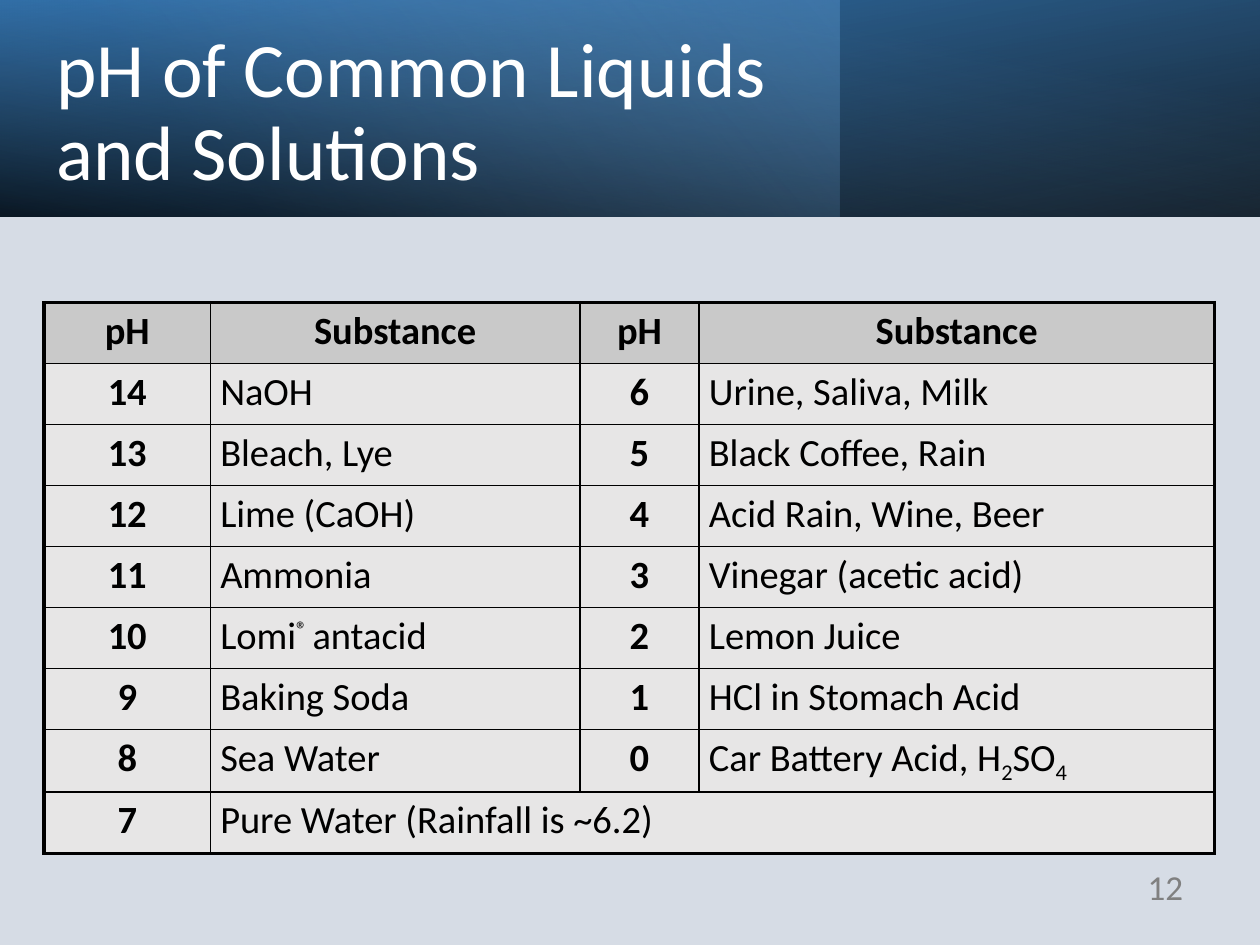
from lxml import etree
from pptx import Presentation
from pptx import util as u
from pptx.dml.color import RGBColor
from pptx.enum import shapes, text
from pptx.oxml import parse_xml
from pptx.oxml.ns import nsdecls, qn


def color(value):
    return RGBColor.from_string(value)


def write(paragraph, runs, size, ink, bold=False):
    for words, baseline in runs:
        run = paragraph.add_run()
        run.text = words
        font_format = {"name": "Calibri", "size": u.Pt(size), "bold": bold}
        for name, value in font_format.items():
            setattr(run.font, name, value)
        run.font.color.rgb = color(ink)
        if baseline:
            run.font._element.set("baseline", str(baseline * 1000))


presentation = Presentation()
presentation.slide_width = u.Cm(25.4)
presentation.slide_height = u.Cm(19.05)
slide = presentation.slides.add_slide(presentation.slide_layouts[6])
slide.background.fill.solid()
slide.background.fill.fore_color.rgb = color("D6DCE5")

bands = [
    (25.4, 180, True, 100, [(0, "000000", 96), (100, "2E75B6", 100)]),
    (16.93, 0, False, 140, [(0, "5B9BD5", 41), (74, "9DC3E6", 0)]),
    (25.4, 0, True, 260, [(0, "000000", 63), (78, "5B9BD5", 15)]),
]
for width, rotation, flipped, angle, stops in bands:
    shape = slide.shapes.add_shape(
        shapes.MSO_SHAPE.RECTANGLE, u.Cm(0), u.Cm(0), u.Cm(width), u.Cm(4.37)
    )
    shape.shadow.inherit = False
    shape.line.fill.background()
    shape.fill.background()
    shape.rotation = rotation
    properties = shape._element.spPr
    if flipped:
        properties.find(qn("a:xfrm")).set("flipH", "1")
    stop_xml = "".join(
        f'<a:gs pos="{position * 1000}"><a:srgbClr val="{shade}">'
        f'<a:alpha val="{alpha * 1000}"/></a:srgbClr></a:gs>'
        for position, shade, alpha in stops
    )
    gradient = parse_xml(
        f'<a:gradFill {nsdecls("a")} rotWithShape="1"><a:gsLst>{stop_xml}</a:gsLst>'
        f'<a:lin ang="{angle * 60000}" scaled="0"/></a:gradFill>'
    )
    properties.replace(properties.find(qn("a:noFill")), gradient)

labels = [
    ("pH of Common Liquids and Solutions", (0.89, 0.69, 16.54, 3.23), 44, "FFFFFF",
     {"alignment": text.PP_ALIGN.LEFT, "line_spacing": 0.9}),
    ("12", (22.17, 17.37, 1.93, 1.02), 20, "808080",
     {"alignment": text.PP_ALIGN.RIGHT, "space_after": u.Pt(6)}),
]
for words, place, size, ink, paragraph_format in labels:
    frame = slide.shapes.add_textbox(*map(u.Cm, place)).text_frame
    frame.word_wrap = True
    frame.vertical_anchor = text.MSO_ANCHOR.MIDDLE
    paragraph = frame.paragraphs[0]
    for name, value in paragraph_format.items():
        setattr(paragraph, name, value)
    write(paragraph, [(words, 0)], size, ink)

rows = [
    ("pH", "Substance", "pH", "Substance"),
    ("14", "NaOH", "6", "Urine, Saliva, Milk"),
    ("13", "Bleach, Lye", "5", "Black Coffee, Rain"),
    ("12", "Lime (CaOH)", "4", "Acid Rain, Wine, Beer"),
    ("11", "Ammonia", "3", "Vinegar (acetic acid)"),
    ("10", [("Lomi", 0), ("® ", 30), ("antacid", 0)], "2", "Lemon Juice"),
    ("9", "Baking Soda", "1", "HCl in Stomach Acid"),
    ("8", "Sea Water", "0",
     [("Car Battery Acid, H", 0), ("2", -25), ("SO", 0), ("4", -25)]),
    ("7", "Pure Water (Rainfall is ~6.2)", "", ""),
]
column_widths = [3.35, 7.45, 2.4, 10.39]
row_height = 1.23
last_row, last_column = len(rows) - 1, len(column_widths) - 1
table = slide.shapes.add_table(
    len(rows), len(column_widths), u.Cm(0.89), u.Cm(6.1),
    u.Cm(sum(column_widths)), u.Cm(row_height * len(rows)),
).table
for column, width in zip(table.columns, column_widths):
    column.width = u.Cm(width)
for row in table.rows:
    row.height = u.Cm(row_height)
table.cell(last_row, 1).merge(table.cell(last_row, last_column))

cell_format = {
    "margin_left": u.Cm(0.2), "margin_right": u.Cm(0.2),
    "margin_top": u.Cm(0.1), "margin_bottom": u.Cm(0.1),
}
for row_index, row in enumerate(rows):
    for column_index, content in enumerate(row):
        cell = table.cell(row_index, column_index)
        for name, value in cell_format.items():
            setattr(cell, name, value)
        header = row_index == 0
        cell.fill.solid()
        cell.fill.fore_color.rgb = color("C9C9C9" if header else "E7E6E6")
        outer_edges = {
            "L": column_index == 0,
            "R": column_index == last_column or cell.is_merge_origin,
            "T": header,
            "B": row_index == last_row,
        }
        if cell.is_spanned:
            del outer_edges["L"]
        cell_properties = cell._tc.get_or_add_tcPr()
        for position, (side, outer) in enumerate(outer_edges.items()):
            line = etree.Element(qn(f"a:ln{side}"), w=str(u.Pt(2.25 if outer else 1)))
            fill = etree.SubElement(line, qn("a:solidFill"))
            etree.SubElement(fill, qn("a:srgbClr"), val="000000")
            cell_properties.insert(position, line)
        if content:
            strong = header or column_index % 2 == 0
            paragraph = cell.text_frame.paragraphs[0]
            paragraph.alignment = text.PP_ALIGN.CENTER if strong else text.PP_ALIGN.LEFT
            runs = [(content, 0)] if isinstance(content, str) else content
            write(paragraph, runs, 22, "000000", strong)

presentation.save("out.pptx")
